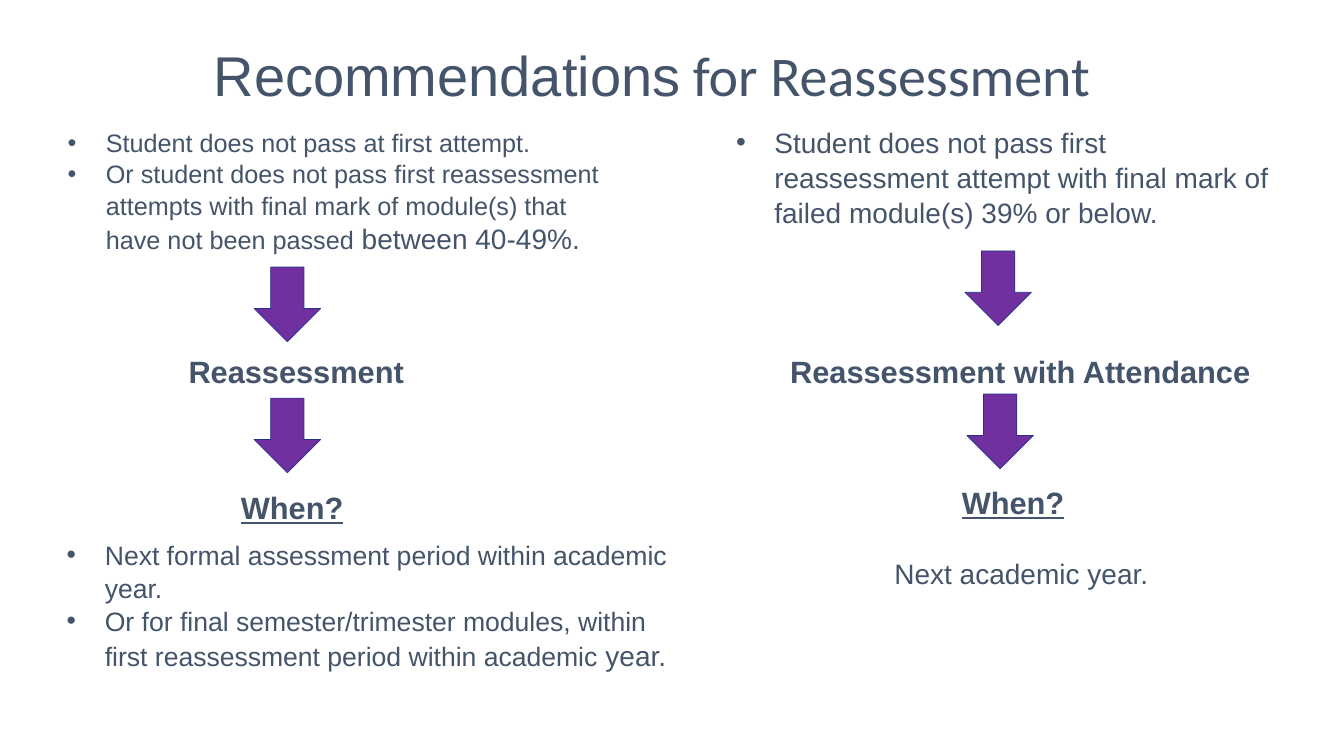
from dataclasses import dataclass
from typing import NamedTuple

from lxml import etree
from pptx import Presentation
from pptx.dml.color import RGBColor
from pptx.enum.shapes import MSO_SHAPE
from pptx.enum.text import MSO_ANCHOR, MSO_AUTO_SIZE, PP_ALIGN
from pptx.oxml.ns import qn
from pptx.util import Inches, Pt

DOWN_ARROW = MSO_SHAPE.DOWN_ARROW
TOP, MIDDLE = MSO_ANCHOR.TOP, MSO_ANCHOR.MIDDLE
LEFT, CENTER = PP_ALIGN.LEFT, PP_ALIGN.CENTER
NO_AUTOFIT = MSO_AUTO_SIZE.NONE

SLIDE_WIDTH, SLIDE_HEIGHT = Inches(13.33), Inches(7.5)
COLUMN, ROW = SLIDE_WIDTH / 133.3, SLIDE_HEIGHT / 75


@dataclass(frozen=True)
class Theme:
    text: RGBColor = RGBColor(0x44, 0x54, 0x6A)
    arrow: RGBColor = RGBColor(0x70, 0x30, 0xA0)
    arrow_line: RGBColor = RGBColor(0x23, 0x32, 0x89)
    font: str = "Arial"
    title_font: str = "Calibri"
    title: int = 40
    heading: int = 22
    large: int = 20
    medium: int = 19
    small: int = 18


THEME = Theme()


class Area(NamedTuple):
    column: float
    row: float
    columns: float
    rows: float

    def lengths(self) -> tuple[int, int, int, int]:
        return (round(self.column * COLUMN), round(self.row * ROW),
                round(self.columns * COLUMN), round(self.rows * ROW))


class Span(NamedTuple):
    text: str
    size: int
    font: str = THEME.font


@dataclass(frozen=True)
class TextBlock:
    area: Area
    paras: list[list[Span]]
    bullet: bool = False
    bold: bool = False
    underline: bool = False
    align: PP_ALIGN = LEFT


def heading(area: Area, text: str, underline: bool = False,
            align: PP_ALIGN = LEFT) -> TextBlock:
    return TextBlock(area, [[Span(text, THEME.heading)]], bold=True,
                     underline=underline, align=align)


TITLE_AREA = Area(7.7, 1.5, 113.9, 12.5)
TITLE = [Span("Recommendations", THEME.title),
         Span(" for Reassessment", THEME.title, THEME.title_font)]

BLOCKS = [
    TextBlock(Area(5.4, 11.8, 55.9, 14.5), [
        [Span("Student does not pass at first attempt.", THEME.small)],
        [Span("Or student does not pass first reassessment attempts with final mark "
              "of module(s) that have not been passed", THEME.small),
         Span(" between 40-49%.", THEME.large)],
    ], bullet=True),
    heading(Area(17.4, 34.3, 33.3, 6.7), "Reassessment"),
    heading(Area(22.6, 47.8, 16.1, 5.3), "When?", underline=True),
    TextBlock(Area(5.3, 52.6, 64.8, 13.8), [
        [Span("Next formal assessment period within academic year.", THEME.medium)],
        [Span("Or for final semester/trimester modules, within first reassessment "
              "period within academic", THEME.medium),
         Span(" year.", THEME.large)],
    ], bullet=True),
    TextBlock(Area(71.7, 11.6, 55.9, 12.5), [
        [Span("Student does not pass first reassessment attempt with final mark of "
              "failed module(s) 39% or below.", THEME.large)],
    ], bullet=True),
    heading(Area(75.9, 34.3, 50.6, 7), "Reassessment with Attendance", align=CENTER),
    heading(Area(94.1, 47.3, 16.1, 5.3), "When?", underline=True),
    TextBlock(Area(87.4, 54.5, 32.4, 3.7), [[Span("Next academic year.", THEME.large)]]),
]

ARROW_CORNERS = [(25.2, 26.5), (25.2, 39.5), (95.7, 24.9), (95.9, 39.1)]
ARROW_COLUMNS, ARROW_ROWS = 6.6, 7.4


def add_bullet(para) -> None:
    properties = para._p.get_or_add_pPr()
    properties.set("marL", str(Inches(0.38)))
    properties.set("indent", str(-Inches(0.38)))
    etree.SubElement(properties, qn("a:buFont")).set("typeface", THEME.font)
    etree.SubElement(properties, qn("a:buChar")).set("char", "•")


def write_para(para, spans: list[Span], *, align: PP_ALIGN = LEFT, bullet: bool = False,
               bold: bool = False, underline: bool = False,
               line_spacing: float = 1.0) -> None:
    if bullet:
        add_bullet(para)
    para.alignment = align
    para.line_spacing = line_spacing
    para.space_before = para.space_after = Pt(0)
    for span in spans:
        run = para.add_run()
        run.text = span.text
        run.font.name = span.font
        run.font.size = Pt(span.size)
        run.font.bold = bold
        run.font.underline = underline
        run.font.color.rgb = THEME.text


def add_title(slide) -> None:
    title = slide.shapes.title
    title.left, title.top, title.width, title.height = TITLE_AREA.lengths()
    frame = title.text_frame
    frame.word_wrap = True
    frame.auto_size = NO_AUTOFIT
    frame.vertical_anchor = MIDDLE
    write_para(frame.paragraphs[0], TITLE, align=CENTER, line_spacing=0.9)


def add_text(slide, block: TextBlock) -> None:
    frame = slide.shapes.add_textbox(*block.area.lengths()).text_frame
    frame.word_wrap = True
    frame.auto_size = NO_AUTOFIT
    frame.vertical_anchor = TOP
    frame.margin_left = frame.margin_right = Inches(0.13)
    frame.margin_top = frame.margin_bottom = Inches(0.07)
    for index, spans in enumerate(block.paras):
        para = frame.add_paragraph() if index else frame.paragraphs[0]
        write_para(para, spans, align=block.align, bullet=block.bullet, bold=block.bold,
                   underline=block.underline, line_spacing=1.04 if block.bullet else 1.0)


def add_arrow(slide, column: float, row: float) -> None:
    area = Area(column, row, ARROW_COLUMNS, ARROW_ROWS)
    arrow = slide.shapes.add_shape(DOWN_ARROW, *area.lengths())
    arrow.shadow.inherit = False
    arrow.fill.solid()
    arrow.fill.fore_color.rgb = THEME.arrow
    arrow.line.color.rgb = THEME.arrow_line
    arrow.line.width = Pt(0.5)


def main() -> None:
    deck = Presentation()
    deck.slide_width, deck.slide_height = SLIDE_WIDTH, SLIDE_HEIGHT
    slide = deck.slides.add_slide(deck.slide_layouts.get_by_name("Title Only"))
    add_title(slide)
    for block in BLOCKS:
        add_text(slide, block)
    for column, row in ARROW_CORNERS:
        add_arrow(slide, column, row)
    deck.save("out.pptx")


if __name__ == "__main__":
    main()
